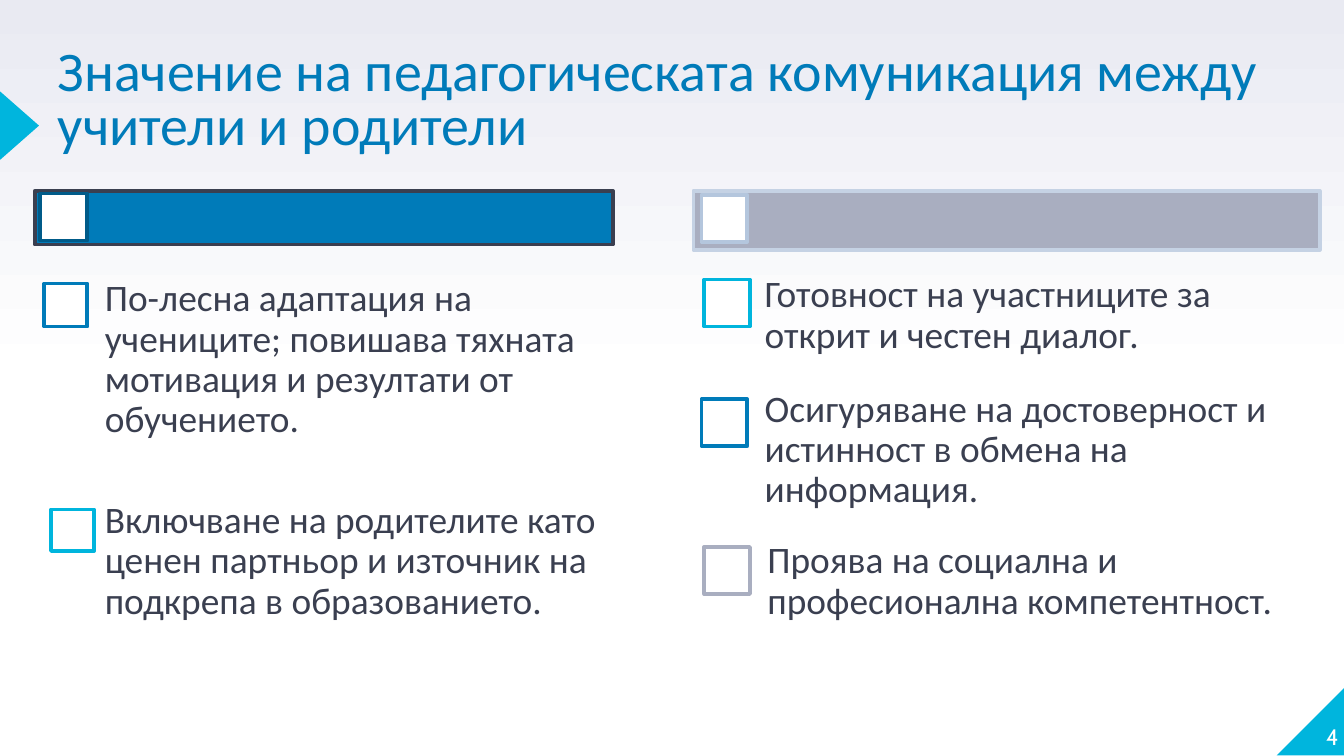
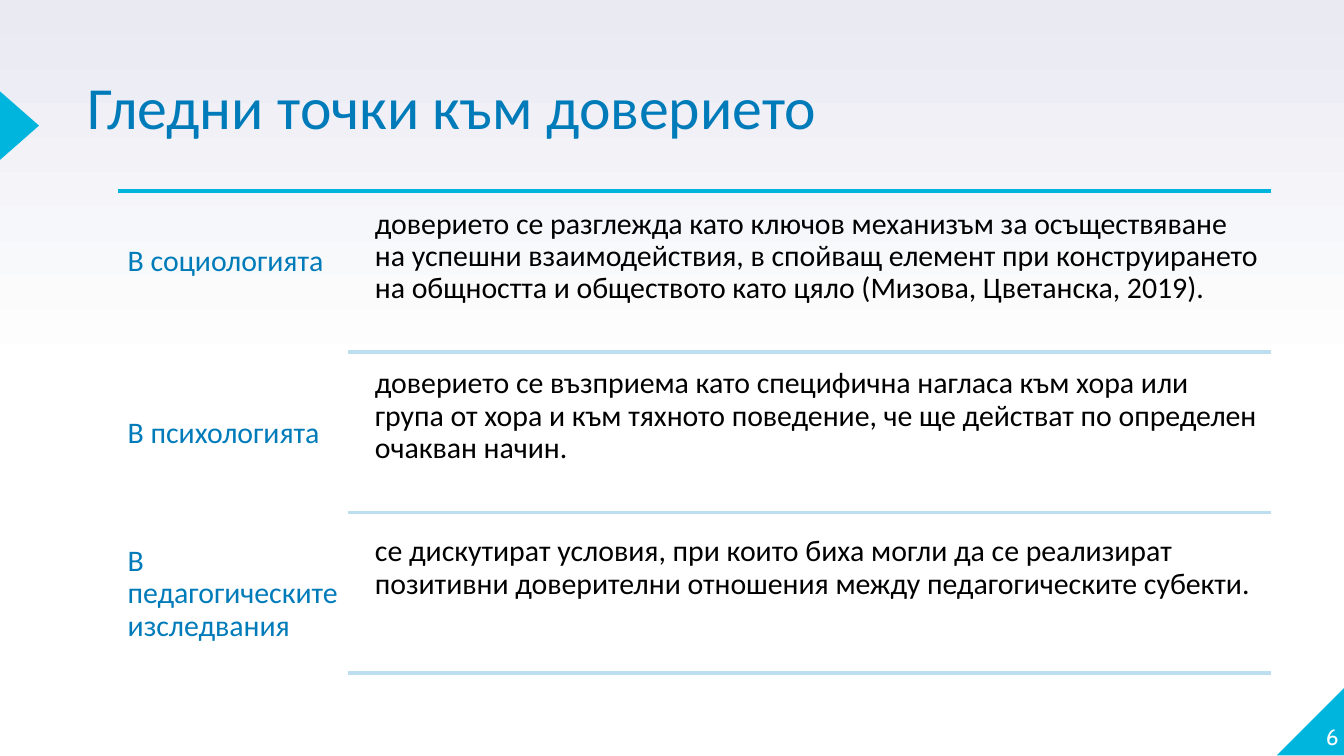
from lxml import etree
from pptx import Presentation
from pptx import util as u
from pptx.dml.color import RGBColor
from pptx.enum import shapes, text
from pptx.oxml.ns import qn

BLUE = RGBColor(0x00, 0x7B, 0xB9)
CYAN = RGBColor(0x00, 0xB5, 0xDD)
DARK = RGBColor(0x3A, 0x3F, 0x50)
GREY = RGBColor(0xA9, 0xAE, 0xC0)
NAVY = RGBColor(0x00, 0x5B, 0x89)
PALE = RGBColor(0xC5, 0xD2, 0xE4)
MIST = RGBColor(0xB4, 0xC6, 0xDD)
RULE = RGBColor(0xBD, 0xDE, 0xEF)
HAZE = RGBColor(0xE9, 0xEA, 0xF2)
WHITE = RGBColor(0xFF, 0xFF, 0xFF)
BLACK = RGBColor(0x00, 0x00, 0x00)

TITLE = {"color": BLUE, "spacing": 0.8}
NUMBER = {"size": 12, "color": WHITE, "font": "Cabin", "spacing": 1.0,
          "anchor": text.MSO_ANCHOR.BOTTOM, "align": text.PP_ALIGN.RIGHT}
POINT = {"size": 20, "color": DARK, "anchor": text.MSO_ANCHOR.MIDDLE, "afters": [7]}
ENTRY = {"size": 16, "color": BLACK, "inset": 0.07, "afters": [5.6]}

BANDS = [
    ((0.26, 1.42, 4.3, 0.4), BLUE, DARK, (0.3, 1.44, 0.35, 0.35), NAVY),
    ((5.16, 1.42, 4.66, 0.44), GREY, PALE, (5.22, 1.45, 0.34, 0.35), MIST),
]
POINTS = [
    ("По-лесна адаптация на учениците; повишава тяхната мотивация и резултати от обучението.",
     (0.62, 2.3, 4.11, 0.76), 0.16, (0.33, 2.11, 0.32, 0.32), BLUE),
    ("Включване на родителите като ценен партньор и източник на подкрепа в образованието.",
     (0.62, 3.8, 4.11, 0.76), 0.16, (0.38, 3.79, 0.32, 0.31), CYAN),
    ("Готовност на участниците за открит и честен диалог.",
     (5.56, 1.94, 4.29, 0.82), 0.13, (5.24, 2.08, 0.34, 0.35), CYAN),
    ("Осигуряване на достоверност и истинност в обмена на информация.",
     (5.56, 2.94, 4.29, 0.82), 0.13, (5.22, 2.97, 0.34, 0.35), BLUE),
    ("Проява на социална и професионална компетентност.",
     (5.58, 3.92, 4.29, 0.82), 0.13, (5.24, 4.07, 0.34, 0.35), GREY),
]
FIELDS = ["В социологията", "В психологията", "В педагогическите изследвания"]
VIEWS = [
    (1.48, "доверието се разглежда като ключов механизъм за осъществяване на успешни "
           "взаимодействия, в спойващ елемент при конструирането на общността и "
           "обществото като цяло (Мизова, Цветанска, 2019)."),
    (2.67, "доверието се възприема като специфична нагласа към хора или група от хора "
           "и към тяхното поведение, че ще действат по определен очакван начин."),
    (3.92, "се дискутират условия, при които биха могли да се реализират позитивни "
           "доверителни отношения между педагогическите субекти."),
]


def inches(values):
    """Turn numbers into lengths."""
    return [u.Inches(v) for v in values]


def add_text(s, box, lines, size, color, font="Calibri", spacing=0.9, inset=0, top=None,
             anchor=text.MSO_ANCHOR.TOP, align=text.PP_ALIGN.LEFT, afters=(0,)):
    """Add a text box with one paragraph per line."""
    tf = s.shapes.add_textbox(*inches(box)).text_frame
    pad = u.Inches(inset)
    frame = {"word_wrap": True, "vertical_anchor": anchor, "margin_left": pad,
             "margin_right": pad, "margin_bottom": pad,
             "margin_top": pad if top is None else u.Inches(top)}
    for name, value in frame.items():
        setattr(tf, name, value)
    for i, (line, after) in enumerate(zip(lines, afters)):
        p = tf.add_paragraph() if i else tf.paragraphs[0]
        layout = {"line_spacing": spacing, "space_after": u.Pt(after), "alignment": align}
        for name, value in layout.items():
            setattr(p, name, value)
        r = p.add_run()
        r.text = line
        for name, value in {"name": font, "size": u.Pt(size)}.items():
            setattr(r.font, name, value)
        r.font.color.rgb = color


def add_box(s, box, fill, line=None, kind=shapes.MSO_SHAPE.RECTANGLE):
    """Add a filled preset shape, outlined when a line colour is given."""
    sp = s.shapes.add_shape(kind, *inches(box))
    sp.shadow.inherit = False
    sp.fill.solid()
    sp.fill.fore_color.rgb = fill
    if line is None:
        sp.line.fill.background()
    else:
        sp.line.color.rgb = line
        sp.line.width = u.Pt(2)
    return sp


def add_rule(s, left, y, color):
    """Add a horizontal rule ending at the right margin."""
    sp = s.shapes.add_connector(shapes.MSO_CONNECTOR.STRAIGHT, *inches((left, y, 9.46, y)))
    sp.line.color.rgb = color
    sp.line.width = u.Pt(2)
    etree.SubElement(sp._element.spPr, qn("a:effectLst"))


def add_base(prs, title, box, size, number):
    """Add a slide with the shared background, corner, pointer, title and number."""
    s = prs.slides.add_slide(prs.slide_layouts[6])
    fill = s.background.fill
    fill.gradient()
    fill.gradient_angle = 90
    for stop, position, color in zip(fill.gradient_stops, (0.5, 1), (WHITE, HAZE)):
        stop.position = position
        stop.color.rgb = color
    corner = add_box(s, (9.5, 5.11, 0.51, 0.51), CYAN, kind=shapes.MSO_SHAPE.RIGHT_TRIANGLE)
    corner._element.spPr.xfrm.set("flipH", "1")
    pointer = add_box(s, (-0.11, 0.79, 0.51, 0.29), CYAN,
                      kind=shapes.MSO_SHAPE.ISOSCELES_TRIANGLE)
    pointer.rotation = 90
    add_text(s, box, [title], size, **TITLE)
    add_text(s, (9.46, 5.07, 0.5, 0.51), [number], **NUMBER)
    return s


def add_importance(prs):
    """Build the slide with two columns of marked points."""
    s = add_base(prs, "Значение на педагогическата комуникация между учители и родители",
                 (0.43, 0.36, 9.46, 0.99), 30, "4")
    for band, fill, line, marker, edge in BANDS:
        add_box(s, band, fill, line)
        add_box(s, marker, WHITE, edge)
    for words, box, inset, marker, edge in POINTS:
        add_text(s, box, [words], inset=inset, **POINT)
        add_box(s, marker, WHITE, edge)


def add_viewpoints(prs):
    """Build the slide with ruled rows of viewpoints."""
    s = add_base(prs, "Гледни точки към доверието", (0.65, 0.62, 9.04, 0.63), 32, "6")
    top, bottom = 1.42, 5.01
    pitch = (bottom - top) / len(VIEWS)
    add_rule(s, 0.88, top, CYAN)
    labels = {**ENTRY, "color": BLUE, "top": 0.41, "afters": [74.6, 51.6, 5.6]}
    add_text(s, (0.88, top, 1.72, 3.64), FIELDS, **labels)
    for i, (y, words) in enumerate(VIEWS, 1):
        add_text(s, (2.72, y, 6.74, 1.14), [words], **ENTRY)
        add_rule(s, 2.59, top + pitch * i, RULE)


def main():
    """Build and save the presentation."""
    prs = Presentation()
    prs.slide_width = u.Inches(10)
    prs.slide_height = prs.slide_width * 9 // 16
    add_importance(prs)
    add_viewpoints(prs)
    prs.save("out.pptx")


if __name__ == "__main__":
    main()
